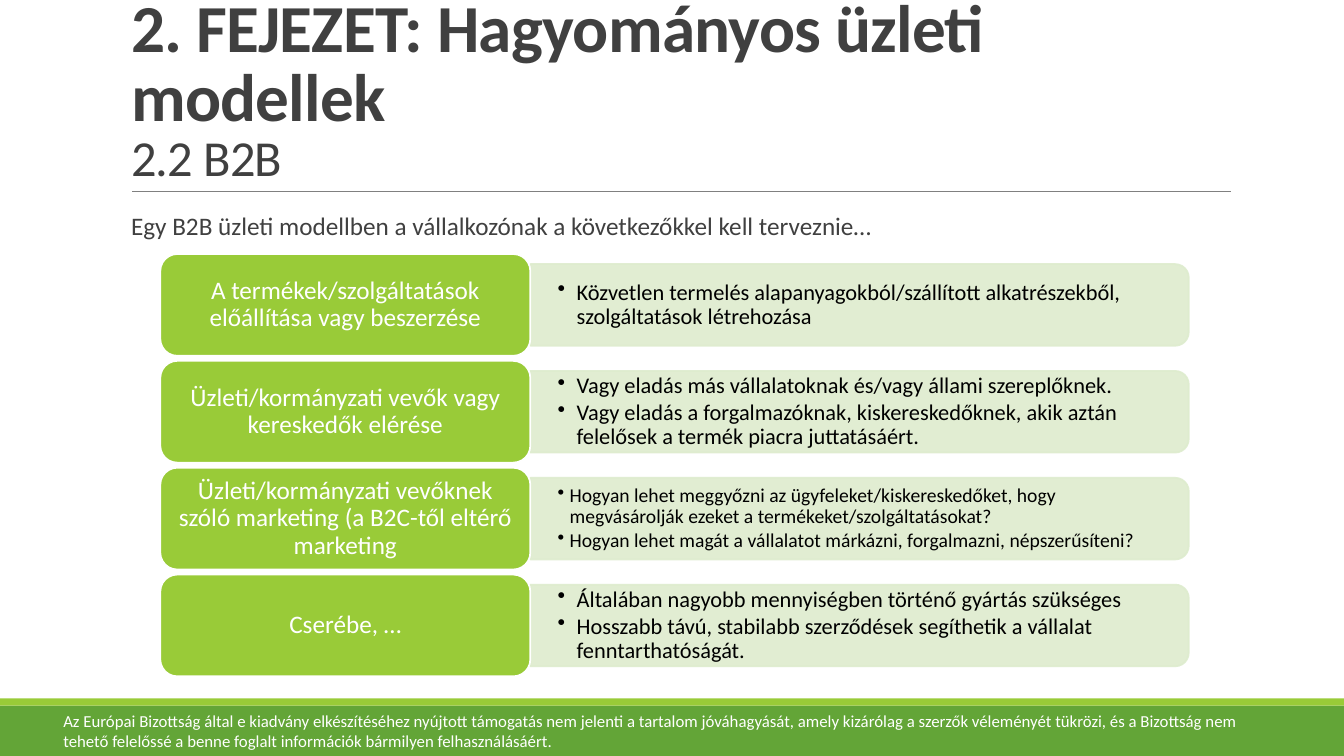
from lxml import etree
from pptx import Presentation
from pptx.dml.color import RGBColor
from pptx.enum.shapes import MSO_CONNECTOR, MSO_SHAPE
from pptx.enum.text import MSO_ANCHOR, MSO_AUTO_SIZE, PP_ALIGN
from pptx.oxml.ns import qn
from pptx.util import Inches, Pt

RECTANGLE = MSO_SHAPE.RECTANGLE
ROUNDED = MSO_SHAPE.ROUNDED_RECTANGLE
ROUND_TOP = MSO_SHAPE.ROUND_2_SAME_RECTANGLE
MIDDLE, BOTTOM = MSO_ANCHOR.MIDDLE, MSO_ANCHOR.BOTTOM
LEFT, CENTER, JUSTIFY = PP_ALIGN.LEFT, PP_ALIGN.CENTER, PP_ALIGN.JUSTIFY

GREEN, DARK_GREEN, PALE_GREEN = "99CB38", "63A537", "DEECCE"
WHITE, BLACK, DARK_GRAY, GRAY = "FFFFFF", "000000", "404040", "808080"

ROW_TOP, ROW_STEP = 2.52, 1.06
LABEL_LEFT, LABEL_WIDTH, LABEL_HEIGHT = 1.59, 3.67, 1.01
BAR_LENGTH, BAR_HEIGHT = 6.53, 0.81

# label, bullets, bullet text size, bullet indent
ROWS = [
    ("A termékek/szolgáltatások előállítása vagy beszerzése",
     ["Közvetlen termelés alapanyagokból/szállított alkatrészekből, szolgáltatások létrehozása"],
     16, 0.19),
    ("Üzleti/kormányzati vevők vagy kereskedők elérése",
     ["Vagy eladás más vállalatoknak és/vagy állami szereplőknek.",
      "Vagy eladás a forgalmazóknak, kiskereskedőknek, akik aztán felelősek a termék "
      "piacra juttatásáért."],
     16, 0.19),
    ("Üzleti/kormányzati vevőknek szóló marketing (a B2C-től eltérő marketing",
     ["Hogyan lehet meggyőzni az ügyfeleket/kiskereskedőket, hogy megvásárolják ezeket a "
      "termékeket/szolgáltatásokat?",
      "Hogyan lehet magát a vállalatot márkázni, forgalmazni, népszerűsíteni?"],
     14, 0.12),
    ("Cserébe, …",
     ["Általában nagyobb mennyiségben történő gyártás szükséges",
      "Hosszabb távú, stabilabb szerződések segíthetik a vállalat fenntarthatóságát."],
     16, 0.19),
]


def add_block(kind, left, top, width, height, fill, line=None):
    block = page.shapes.add_shape(kind, Inches(left), Inches(top), Inches(width), Inches(height))
    block.shadow.inherit = False
    block.fill.solid()
    block.fill.fore_color.rgb = RGBColor.from_string(fill)
    if line:
        block.line.color.rgb = RGBColor.from_string(line)
        block.line.width = Pt(1.25)
    else:
        block.line.fill.background()
    return block


def format_text(box, size, color, align=LEFT, spacing=1.0, margins=(0.1, 0.05)):
    """Style every paragraph and run; margins are horizontal, vertical in inches."""
    frame = box.text_frame
    frame.word_wrap = True
    frame.auto_size = MSO_AUTO_SIZE.NONE
    frame.margin_left = frame.margin_right = Inches(margins[0])
    frame.margin_top = frame.margin_bottom = Inches(margins[1])
    for para in frame.paragraphs:
        para.alignment = align
        para.line_spacing = spacing
        for span in para.runs:
            span.font.name = "Calibri"
            span.font.size = Pt(size)
            span.font.color.rgb = RGBColor.from_string(color)


deck = Presentation()
deck.slide_width, deck.slide_height = Inches(13.33), Inches(7.5)
page = deck.slides.add_slide(deck.slide_layouts[1])

# Footer band and title rule
add_block(RECTANGLE, 0, 7, 13.33, 0.5, DARK_GREEN)
add_block(RECTANGLE, 0, 6.93, 13.33, 0.07, GREEN)
rule = page.shapes.add_connector(MSO_CONNECTOR.STRAIGHT, Inches(1.31), Inches(1.9),
                                 Inches(12.21), Inches(1.9))
rule.line.color.rgb = RGBColor.from_string(GRAY)
rule.line.width = Pt(0.5)
etree.SubElement(rule.element.spPr, qn("a:effectLst"))

# Title
title = page.shapes.title
title.left, title.top, title.width, title.height = map(Inches, (1.2, 0.31, 11, 1.59))
title.text_frame.text = "2. FEJEZET: Hagyományos üzleti modellek \v2.2 B2B"
format_text(title, 48, DARK_GRAY, spacing=0.85)
title.text_frame.vertical_anchor = BOTTOM
chapter, section = title.text_frame.paragraphs[0].runs
chapter.font.bold = True
section.font.bold = False
section.font.size = Pt(36)
for span in (chapter, section):
    span.font._element.set("spc", "-50")

# Introduction
intro = page.placeholders[1]
intro.left, intro.top, intro.width, intro.height = map(Inches, (1.2, 2.02, 11, 4.4))
intro.text_frame.text = "Egy B2B üzleti modellben a vállalkozónak a következőkkel kell terveznie…"
format_text(intro, 18, DARK_GRAY, JUSTIFY, 1.07, (0, 0.05))
para = intro.text_frame.paragraphs[0]
para.space_before, para.space_after = Pt(12), Pt(8)
properties = para._p.get_or_add_pPr()
properties.set("marL", str(Inches(0.1)))
properties.set("indent", "0")
etree.SubElement(properties, qn("a:buNone"))

# Rows: label on the left, bullet bar on the right
bar_left = LABEL_LEFT + LABEL_WIDTH
for index, (label_text, bullets, size, indent) in enumerate(ROWS):
    top = ROW_TOP + index * ROW_STEP
    middle = top + LABEL_HEIGHT / 2

    # The bar stands upright and is turned so its rounded end points right
    bar = add_block(ROUND_TOP, bar_left + (BAR_LENGTH - BAR_HEIGHT) / 2, middle - BAR_LENGTH / 2,
                    BAR_HEIGHT, BAR_LENGTH, PALE_GREEN, PALE_GREEN)
    bar.rotation = 90
    for color in bar.element.spPr.iter(qn("a:srgbClr")):
        etree.SubElement(color, qn("a:alpha"), val="90000")

    details = page.shapes.add_textbox(Inches(bar_left), Inches(middle - 0.365),
                                      Inches(6.49), Inches(0.73))
    details.text_frame.text = "\n".join(bullets)
    format_text(details, size, BLACK, spacing=0.9, margins=(0.27, 0.14))
    details.text_frame.vertical_anchor = MIDDLE
    for para in details.text_frame.paragraphs:
        para.space_after = Pt(2)
        properties = para._p.get_or_add_pPr()
        properties.set("marL", str(Inches(indent)))
        properties.set("indent", str(-Inches(indent)))
        etree.SubElement(properties, qn("a:buChar"), char="•")

    label = add_block(ROUNDED, LABEL_LEFT, top, LABEL_WIDTH, LABEL_HEIGHT, GREEN, WHITE)
    label.text_frame.text = label_text
    format_text(label, 18, WHITE, CENTER, 0.9, (0.07, 0.04))
    label.text_frame.vertical_anchor = MIDDLE

# Disclaimer
disclaimer = page.shapes.add_textbox(Inches(0.53), Inches(7), Inches(12.3), Inches(0.5))
disclaimer.text_frame.text = (
    "Az Európai Bizottság által e kiadvány elkészítéséhez nyújtott támogatás nem jelenti a "
    "tartalom jóváhagyását, amely kizárólag a szerzők véleményét tükrözi, és a Bizottság nem "
    "tehető felelőssé a benne foglalt információk bármilyen felhasználásáért.")
format_text(disclaimer, 12, WHITE)

deck.save("out.pptx")
